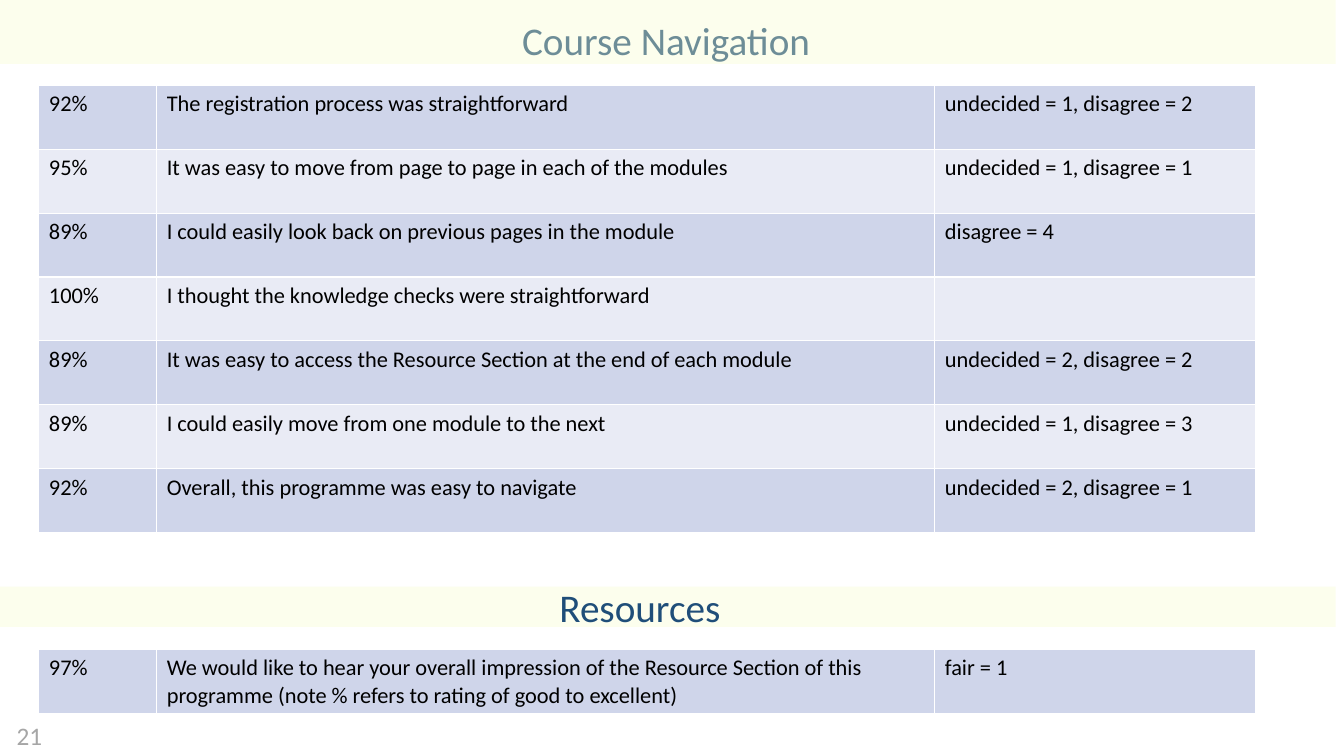
import pptx
import pptx.util
import pptx.dml.color
import pptx.enum.shapes
import pptx.oxml.ns
from lxml import etree

Cm = pptx.util.Cm
Pt = pptx.util.Pt
RGBColor = pptx.dml.color.RGBColor

CREAM = RGBColor(0xF9, 0xFE, 0xCE)
NAVY = RGBColor(0x1F, 0x4E, 0x79)
GREY = RGBColor(0xA6, 0xA6, 0xA6)
BLACK = RGBColor(0x00, 0x00, 0x00)
ROW_FILLS = (RGBColor(0xCF, 0xD5, 0xEA), RGBColor(0xE9, 0xEB, 0xF5))

COLUMN_WIDTHS = (2.97, 19.61, 8.08)
ROW_HEIGHT = 1.61

NAVIGATION = [
    ("92%", "The registration process was straightforward", "undecided = 1, disagree = 2"),
    ("95%", "It was easy to move from page to page in each of the modules",
     "undecided = 1, disagree = 1"),
    ("89%", "I could easily look back on previous pages in the module", "disagree = 4"),
    ("100%", "I thought the knowledge checks were straightforward", ""),
    ("89%", "It was easy to access the Resource Section at the end of each module",
     "undecided = 2, disagree = 2"),
    ("89%", "I could easily move from one module to the next", "undecided = 1, disagree = 3"),
    ("92%", "Overall, this programme was easy to navigate", "undecided = 2, disagree = 1"),
]
RESOURCES = [
    ("97%", "We would like to hear your overall impression of the Resource Section of this "
     "programme (note % refers to rating of good to excellent)", "fair = 1"),
]


def style_paragraph(p, size, color):
    p.font.name = "Calibri"
    p.font.size = Pt(size)
    p.font.color.rgb = color


def add_band(s, top, height):
    sp = s.shapes.add_shape(pptx.enum.shapes.MSO_SHAPE.RECTANGLE,
                            Cm(-0.15), Cm(top), Cm(33.81), Cm(height))
    sp.shadow.inherit = False
    sp.line.fill.background()
    sp.fill.solid()
    sp.fill.fore_color.rgb = CREAM
    color = sp.fill._xPr.find(".//" + pptx.oxml.ns.qn("a:srgbClr"))
    etree.SubElement(color, pptx.oxml.ns.qn("a:alpha"), val="36000")


def add_text(s, text, left, top, width, height, size, color):
    tf = s.shapes.add_textbox(Cm(left), Cm(top), Cm(width), Cm(height)).text_frame
    tf.word_wrap = True
    tf.text = text
    style_paragraph(tf.paragraphs[0], size, color)


def add_results(s, top, rows):
    table = s.shapes.add_table(len(rows), len(COLUMN_WIDTHS), Cm(0.98), Cm(top),
                               Cm(sum(COLUMN_WIDTHS)), Cm(ROW_HEIGHT * len(rows))).table
    table.first_row = False
    table.horz_banding = False
    for column, width in zip(table.columns, COLUMN_WIDTHS):
        column.width = Cm(width)
    for i, row in enumerate(rows):
        table.rows[i].height = Cm(ROW_HEIGHT)
        for j, text in enumerate(row):
            cell = table.cell(i, j)
            cell.fill.solid()
            cell.fill.fore_color.rgb = ROW_FILLS[i % 2]
            cell.text = text
            style_paragraph(cell.text_frame.paragraphs[0], 16, BLACK)


def main():
    prs = pptx.Presentation()
    prs.slide_width = Cm(33.87)
    prs.slide_height = Cm(19.05)
    s = prs.slides.add_slide(prs.slide_layouts[6])

    add_band(s, 14.78, 1.02)
    add_results(s, 2.15, NAVIGATION)
    add_text(s, "Course Navigation", 12.91, 0.28, 9.35, 1.45, 28, NAVY)
    add_results(s, 16.36, RESOURCES)
    add_text(s, "Resources", 13.85, 14.58, 9.35, 1.45, 28, NAVY)
    add_text(s, "21", 0.17, 18.03, 1.68, 1.02, 18, GREY)
    add_band(s, 0, 1.61)

    prs.save("out.pptx")


if __name__ == "__main__":
    main()
